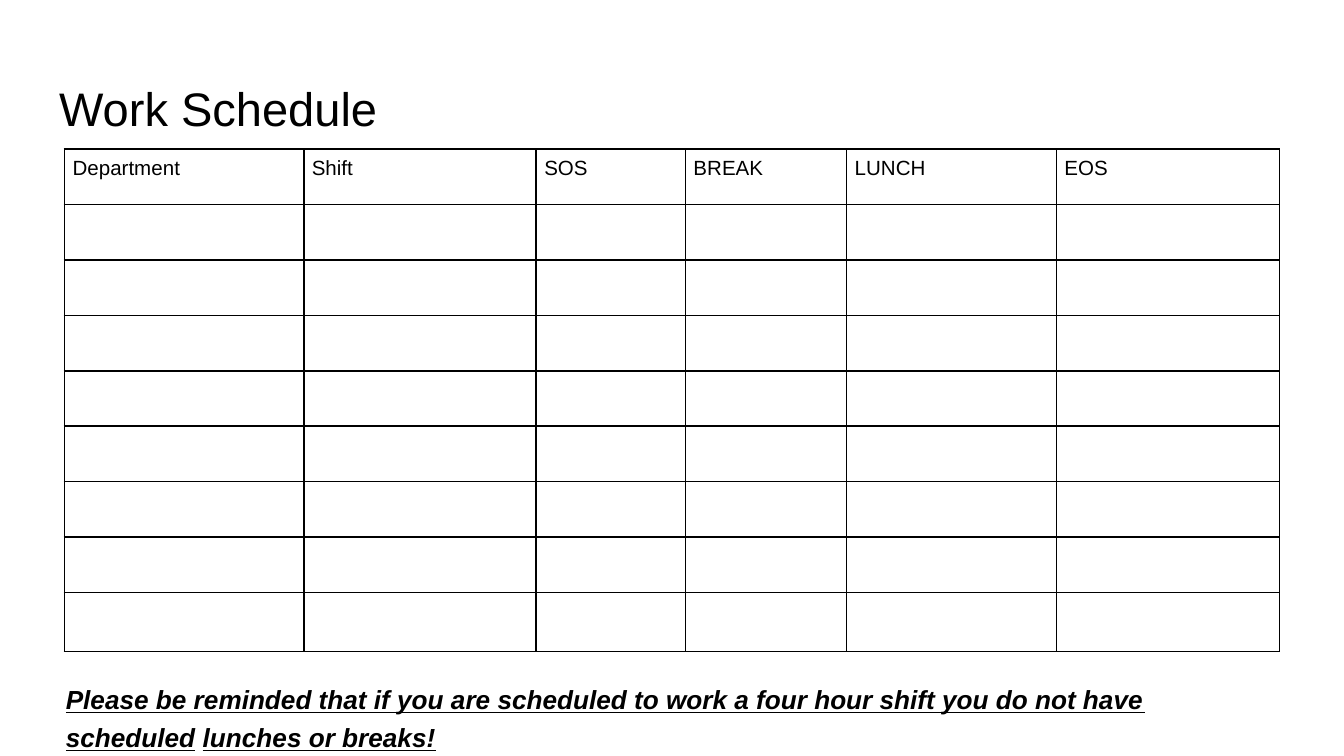
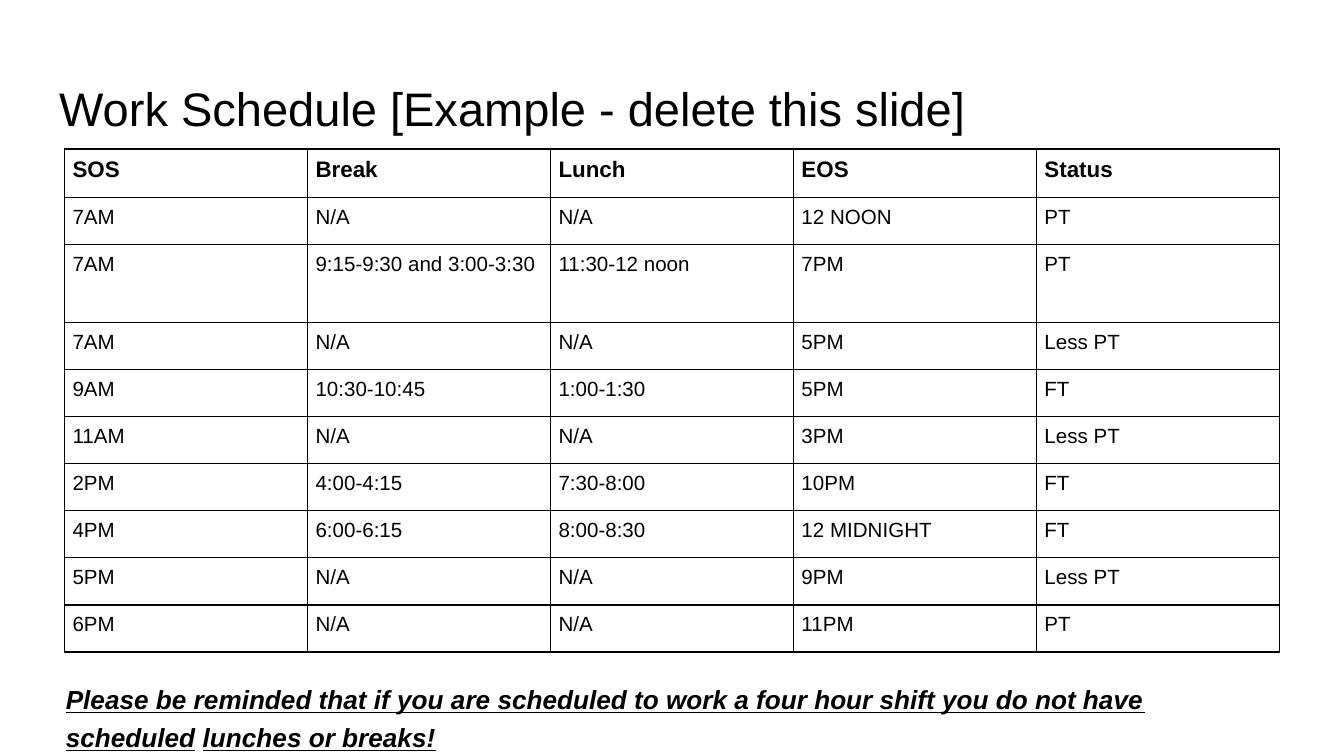
from lxml import etree
from pptx import Presentation
from pptx.dml.color import RGBColor
from pptx.enum.text import MSO_ANCHOR, MSO_AUTO_SIZE, PP_ALIGN
from pptx.oxml.ns import qn
from pptx.util import Inches, Pt

BLACK = RGBColor(0x00, 0x00, 0x00)
WHITE = RGBColor(0xFF, 0xFF, 0xFF)
FONT = "Arial"
LEFT = PP_ALIGN.LEFT
MIDDLE = MSO_ANCHOR.MIDDLE
FIXED = MSO_AUTO_SIZE.NONE
GROW = MSO_AUTO_SIZE.SHAPE_TO_FIT_TEXT
TITLE_ONLY = 5

SLIDE_WIDTH = 10
SLIDE_HEIGHT = SLIDE_WIDTH * 9 / 16
TITLE_AREA = (0.34, 0.49, 9.32, 0.63)
TABLE_LEFT, TABLE_TOP, TABLE_WIDTH, TABLE_HEIGHT = 0.48, 1.11, 9.04, 3.74
NOTE_AREA = (TABLE_LEFT, 5.04, TABLE_WIDTH, 0.52)
CELL_INSET = 0.06
LAST_ROW = 0.44

NOTE = [
    ("Please be reminded that if you are scheduled to work a four hour shift "
     "you do not have scheduled", True),
    (" ", False),
    ("lunches or breaks!", True),
]

SCHEDULES = [
    {
        "title": "Work Schedule",
        "header": ("Department", "Shift", "SOS", "BREAK", "LUNCH", "EOS"),
        "header_format": {"size": 11},
        "rows": [("",) * 6] * 8,
        "widths": (1.78, 1.73, 1.11, 1.2, 1.56, 1.66),
        "heights": [(TABLE_HEIGHT - LAST_ROW) / 8] * 8 + [LAST_ROW],
    },
    {
        "title": "Work Schedule [Example - delete this slide]",
        "header": ("SOS", "Break", "Lunch", "EOS", "Status"),
        "header_format": {"size": 12, "bold": True},
        "rows": [
            ("7AM", "N/A", "N/A", "12 NOON", "PT"),
            ("7AM", "9:15-9:30 and 3:00-3:30", "11:30-12 noon", "7PM", "PT"),
            ("7AM", "N/A", "N/A", "5PM", "Less PT"),
            ("9AM", "10:30-10:45", "1:00-1:30", "5PM", "FT"),
            ("11AM", "N/A", "N/A", "3PM", "Less PT"),
            ("2PM", "4:00-4:15", "7:30-8:00", "10PM", "FT"),
            ("4PM", "6:00-6:15", "8:00-8:30", "12 MIDNIGHT", "FT"),
            ("5PM", "N/A", "N/A", "9PM", "Less PT"),
            ("6PM", "N/A", "N/A", "11PM", "PT"),
        ],
        "widths": [TABLE_WIDTH / 5] * 5,
        "heights": [0.36, 0.35, 0.58] + [0.35] * 7,
    },
]


def write(frame, text, size, bold=False, italic=False, indent=0, spacing=None):
    spans = [(text, False)] if isinstance(text, str) else text
    para = frame.paragraphs[0]
    para.alignment = LEFT
    para.line_spacing = spacing
    properties = para._p.get_or_add_pPr()
    properties.set("marL", str(Inches(indent)))
    properties.set("indent", "0")
    for words, underline in spans:
        span = para.add_run()
        span.text = words
        font = span.font
        font.name, font.size = FONT, Pt(size)
        font.bold, font.italic, font.underline = bold, italic, underline
        font.color.rgb = BLACK


def set_insets(target, left, top, right, bottom):
    target.margin_left, target.margin_top = Inches(left), Inches(top)
    target.margin_right, target.margin_bottom = Inches(right), Inches(bottom)


def add_title(page, text):
    box = page.shapes.title
    box.left, box.top, box.width, box.height = map(Inches, TITLE_AREA)
    frame = box.text_frame
    frame.word_wrap = True
    frame.auto_size = FIXED
    frame.vertical_anchor = MIDDLE
    set_insets(frame, 0.1, 0.1, 0.1, 0.1)
    write(frame, text, size=25.2)


def add_note(page):
    frame = page.shapes.add_textbox(*map(Inches, NOTE_AREA)).text_frame
    frame.word_wrap = True
    frame.auto_size = GROW
    set_insets(frame, 0, 0, 0, 0)
    write(frame, NOTE, size=14, bold=True, italic=True, indent=0.01, spacing=1.2)


def add_borders(cell):
    properties = cell._tc.get_or_add_tcPr()
    for side in ("a:lnL", "a:lnR", "a:lnT", "a:lnB"):
        line = etree.SubElement(properties, qn(side), w=str(Pt(1)))
        fill = etree.SubElement(line, qn("a:solidFill"))
        etree.SubElement(fill, qn("a:srgbClr"), val=str(BLACK))


def add_schedule(page, schedule):
    rows = [schedule["header"], *schedule["rows"]]
    widths, heights = schedule["widths"], schedule["heights"]
    area = (TABLE_LEFT, TABLE_TOP, TABLE_WIDTH, TABLE_HEIGHT)
    table = page.shapes.add_table(len(rows), len(widths), *map(Inches, area)).table
    table.first_row = table.horz_banding = False
    for column, width in zip(table.columns, widths):
        column.width = Inches(width)
    for row, height in zip(table.rows, heights):
        row.height = Inches(height)
    for row_index, texts in enumerate(rows):
        style = {"size": 11} if row_index else schedule["header_format"]
        for column_index, text in enumerate(texts):
            cell = table.cell(row_index, column_index)
            set_insets(cell, 0, CELL_INSET, 0, 0)
            add_borders(cell)
            cell.fill.solid()
            cell.fill.fore_color.rgb = WHITE
            if text:
                write(cell.text_frame, text, indent=CELL_INSET, **style)


def main():
    deck = Presentation()
    deck.slide_width, deck.slide_height = Inches(SLIDE_WIDTH), Inches(SLIDE_HEIGHT)
    for schedule in SCHEDULES:
        page = deck.slides.add_slide(deck.slide_layouts[TITLE_ONLY])
        add_title(page, schedule["title"])
        add_schedule(page, schedule)
        add_note(page)
    deck.save("out.pptx")


if __name__ == "__main__":
    main()
